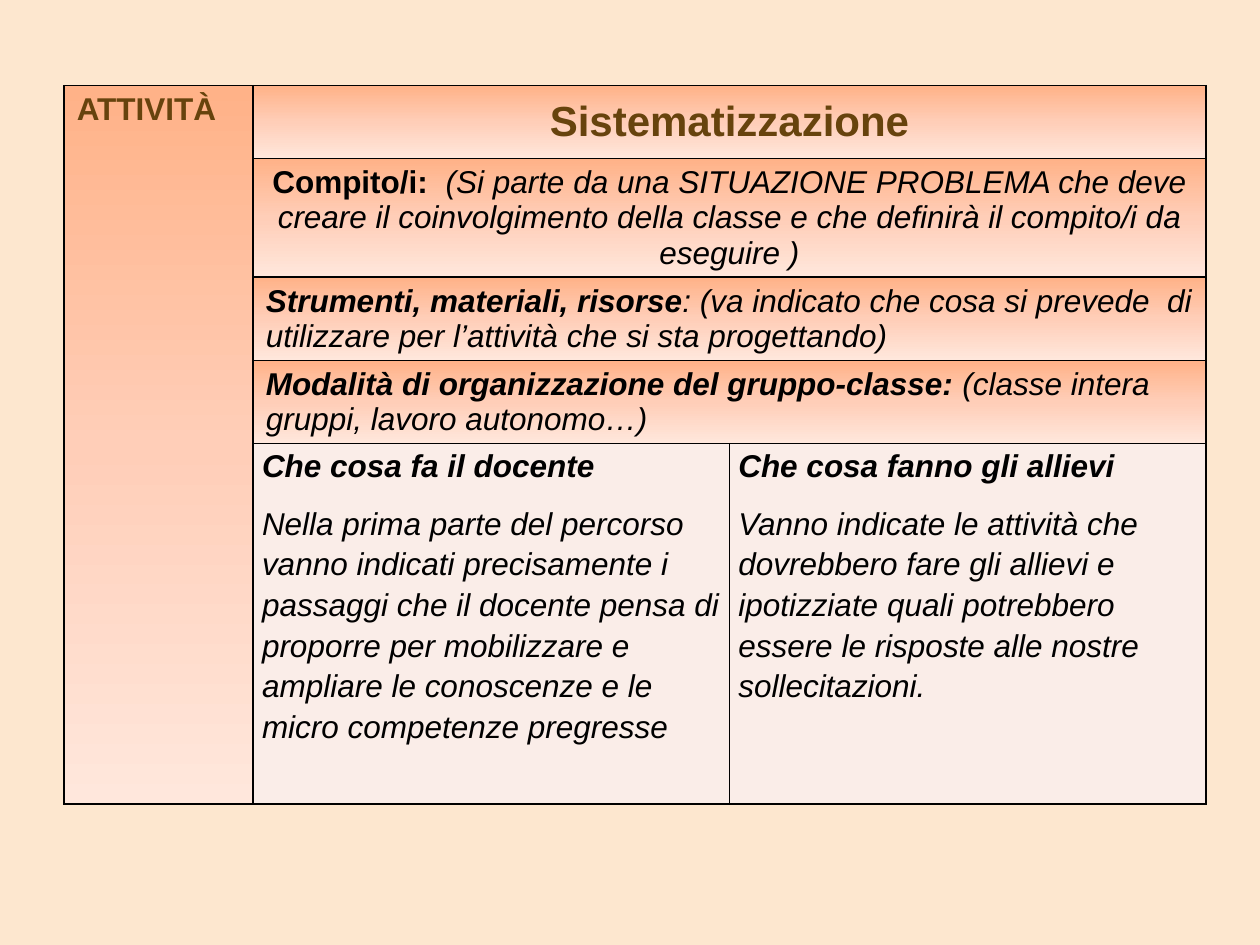
"""Build a lesson-planning slide with a merged activity table."""
from pptx import Presentation
from pptx.dml.color import RGBColor
from pptx.enum.text import MSO_ANCHOR, PP_ALIGN
from pptx.oxml import parse_xml
from pptx.util import Inches, Pt

CENTER, LEFT = PP_ALIGN.CENTER, PP_ALIGN.LEFT
TOP, MIDDLE = MSO_ANCHOR.TOP, MSO_ANCHOR.MIDDLE
BACKGROUND = RGBColor(0xFD, 0xE7, 0xCF)
BROWN = RGBColor(0x67, 0x43, 0x0D)
BLACK = RGBColor(0, 0, 0)
PALE = RGBColor(0xFA, 0xED, 0xE8)
GRADIENT = [
    (0, RGBColor(0xFF, 0xB2, 0x88)),
    (50, RGBColor(0xFF, 0xCE, 0xB8)),
    (100, RGBColor(0xFF, 0xE7, 0xDC)),
]
NAMESPACE = 'xmlns:a="http://schemas.openxmlformats.org/drawingml/2006/main"'

LABEL = {"name": "Arial", "size": Pt(18), "bold": True, "italic": False, "color": BROWN}
HEADING = {**LABEL, "size": Pt(24)}
STRONG = {**LABEL, "color": BLACK}
STRONG_ITALIC = {**STRONG, "italic": True}
ITALIC = {**STRONG_ITALIC, "bold": False}

HEADER = {"align": CENTER, "anchor": MIDDLE}
CENTERED = {"align": CENTER, "anchor": TOP}
PLAIN = {"align": LEFT, "anchor": TOP}

COLUMN_WIDTHS = [1.5, 3.78, 3.78]
ROW_HEIGHTS = [0.58, 0.94, 0.66, 0.66, 2.86]
BANDS = [
    ((0, 0), (4, 0), PLAIN, [("ATTIVITÀ", LABEL)]),
    ((0, 1), (0, 2), HEADER, [("Sistematizzazione", HEADING)]),
    ((1, 1), (1, 2), CENTERED, [
        ("Compito/i:  ", STRONG),
        ("(Si parte da una SITUAZIONE PROBLEMA che deve creare il coinvolgimento "
         "della classe e che definirà il compito/i da eseguire )", ITALIC),
    ]),
    ((2, 1), (2, 2), PLAIN, [
        ("Strumenti, materiali, risorse", STRONG_ITALIC),
        (": (va indicato che cosa si prevede  di utilizzare per l’attività "
         "che si sta progettando)", ITALIC),
    ]),
    ((3, 1), (3, 2), PLAIN, [
        ("Modalità di organizzazione del gruppo-classe: ", STRONG_ITALIC),
        ("(classe intera gruppi, lavoro autonomo…)", ITALIC),
    ]),
]
ROLES = [
    ("Che cosa fa il docente",
     "Nella prima parte del percorso vanno indicati precisamente i passaggi che il "
     "docente pensa di proporre per mobilizzare e ampliare le conoscenze e le micro "
     "competenze pregresse"),
    ("Che cosa fanno gli allievi",
     "Vanno indicate le attività che dovrebbero fare gli allievi e ipotizziate quali "
     "potrebbero essere le risposte alle nostre sollecitazioni."),
]


def add_runs(paragraph, runs):
    for text, formats in runs:
        run = paragraph.add_run()
        run.text = text
        for attribute, value in formats.items():
            if attribute == "color":
                run.font.color.rgb = value
            else:
                setattr(run.font, attribute, value)


def add_borders(cell):
    properties = cell._tc.get_or_add_tcPr()
    for side in ("lnL", "lnR", "lnT", "lnB"):
        properties.append(parse_xml(
            f'<a:{side} {NAMESPACE} w="{Pt(1)}"><a:solidFill>'
            f'<a:srgbClr val="{BLACK}"/></a:solidFill></a:{side}>'))


def fill_gradient(cell):
    stops = "".join(
        f'<a:gs pos="{position * 1000}"><a:srgbClr val="{color}"/></a:gs>'
        for position, color in GRADIENT)
    cell._tc.get_or_add_tcPr().append(parse_xml(
        f'<a:gradFill {NAMESPACE} rotWithShape="1"><a:gsLst>{stops}</a:gsLst>'
        '<a:lin ang="5400000" scaled="0"/></a:gradFill>'))


def fill_band(table, first, last, layout, runs):
    cell = table.cell(*first)
    cell.merge(table.cell(*last))
    cell.vertical_anchor = layout["anchor"]
    fill_gradient(cell)
    paragraph = cell.text_frame.paragraphs[0]
    paragraph.alignment = layout["align"]
    add_runs(paragraph, runs)


def fill_role(cell, title, description):
    margins = {"margin_left": 0.07, "margin_right": 0.07, "margin_top": 0, "margin_bottom": 0}
    for attribute, value in margins.items():
        setattr(cell, attribute, Inches(value))
    cell.fill.solid()
    cell.fill.fore_color.rgb = PALE
    frame = cell.text_frame
    add_runs(frame.paragraphs[0], [(title, STRONG_ITALIC)])
    add_runs(frame.add_paragraph(), [(description, ITALIC)])
    for paragraph in frame.paragraphs:
        paragraph.line_spacing = 1.15
        paragraph.space_after = Pt(10)


def main():
    presentation = Presentation()
    presentation.slide_width, presentation.slide_height = Inches(10), Inches(7.5)
    slide = presentation.slides.add_slide(presentation.slide_layouts[6])
    slide.background.fill.solid()
    slide.background.fill.fore_color.rgb = BACKGROUND

    table = slide.shapes.add_table(
        len(ROW_HEIGHTS), len(COLUMN_WIDTHS), Inches(0.51), Inches(0.68),
        Inches(sum(COLUMN_WIDTHS)), Inches(sum(ROW_HEIGHTS))).table
    table.first_row = table.horz_banding = False
    for column, width in zip(table.columns, COLUMN_WIDTHS):
        column.width = Inches(width)
    for row, height in zip(table.rows, ROW_HEIGHTS):
        row.height = Inches(height)
    for cell in table.iter_cells():
        add_borders(cell)
    for band in BANDS:
        fill_band(table, *band)
    for column, role in enumerate(ROLES, start=1):
        fill_role(table.cell(len(ROW_HEIGHTS) - 1, column), *role)
    presentation.save("out.pptx")


if __name__ == "__main__":
    main()
